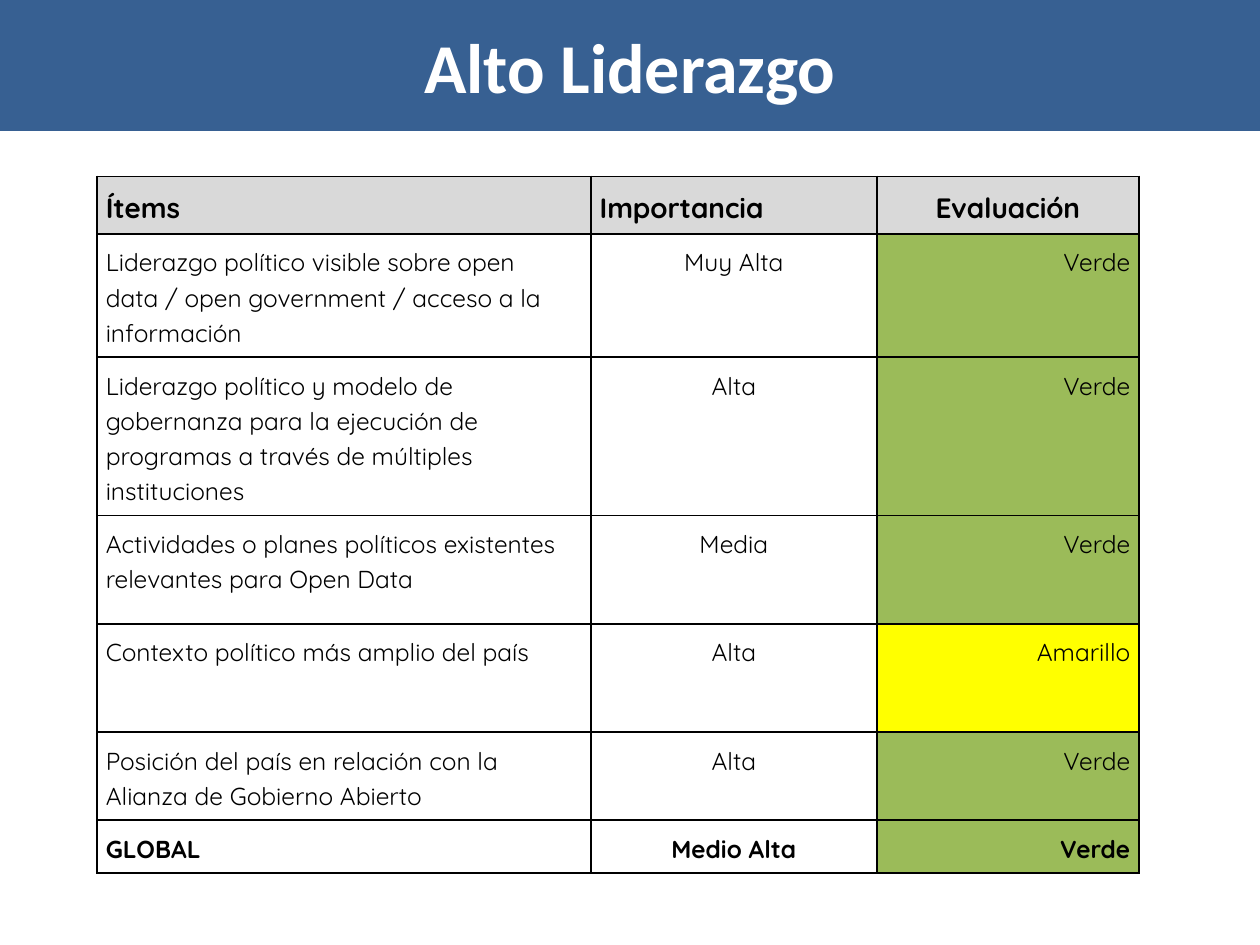
from lxml import etree
from pptx import Presentation
from pptx.dml.color import RGBColor
from pptx.enum import shapes, text
from pptx.oxml import ns
from pptx.util import Pt

LEFT, CENTER, RIGHT = text.PP_ALIGN.LEFT, text.PP_ALIGN.CENTER, text.PP_ALIGN.RIGHT
BLACK, WHITE, GREY, BLUE = "000000", "FFFFFF", "D9D9D9", "376092"
RATING_FILLS = {"Verde": "9BBB59", "Amarillo": "FFFF00"}
COL_WIDTHS = [282.24, 163.44, 149.76]
ROW_HEIGHTS = [30.24, 61.92, 74.88, 61.92, 61.92, 48.96, 30.24]
ROWS = [
    ("Ítems", "Importancia", "Evaluación"),
    ("Liderazgo político visible sobre open data / open government / acceso a la información",
     "Muy Alta", "Verde"),
    ("Liderazgo político y modelo de gobernanza para la ejecución de programas "
     "a través de múltiples instituciones", "Alta", "Verde"),
    ("Actividades o planes políticos existentes relevantes para Open Data", "Media", "Verde"),
    ("Contexto político más amplio del país", "Alta", "Amarillo"),
    ("Posición del país en relación con la Alianza de Gobierno Abierto", "Alta", "Verde"),
    ("GLOBAL", "Medio Alta", "Verde"),
]


def rgb(color):
    return RGBColor.from_string(color)


def format_text(p, font, size, color, bold, align):
    p.alignment = align
    for r in p.runs:
        r.font.name = font
        r.font.size = Pt(size)
        r.font.bold = bold
        r.font.color.rgb = rgb(color)


def set_fill(fill, color):
    if color:
        fill.solid()
        fill.fore_color.rgb = rgb(color)
    else:
        fill.background()


def set_borders(cell, color, width):
    tc_pr = cell._tc.get_or_add_tcPr()
    for side in ("lnL", "lnR", "lnT", "lnB"):
        ln = etree.SubElement(tc_pr, ns.qn(f"a:{side}"), w=str(Pt(width)))
        solid = etree.SubElement(ln, ns.qn("a:solidFill"))
        etree.SubElement(solid, ns.qn("a:srgbClr"), val=color)


def add_title(s, title, left, top, width, height):
    sp = s.shapes.add_shape(shapes.MSO_SHAPE.RECTANGLE,
                            Pt(left), Pt(top), Pt(width), Pt(height))
    sp.shadow.inherit = False
    set_fill(sp.fill, BLUE)
    sp.line.fill.background()
    tf = sp.text_frame
    tf.word_wrap = True
    tf.vertical_anchor = text.MSO_ANCHOR.MIDDLE
    tf.text = title
    format_text(tf.paragraphs[0], "Calibri", 40, WHITE, True, CENTER)


def format_cell(cell, value, size, bold, align, fill):
    cell.margin_left = cell.margin_right = Pt(5)
    cell.margin_top = cell.margin_bottom = Pt(5)
    set_borders(cell, BLACK, 1)
    set_fill(cell.fill, fill)
    cell.text_frame.text = value
    p = cell.text_frame.paragraphs[0]
    p.line_spacing = 1.15
    p.space_after = Pt(10)
    format_text(p, "Quicksand", size, BLACK, bold, align)


def add_ratings(s, left, top):
    table = s.shapes.add_table(len(ROWS), len(COL_WIDTHS), Pt(left), Pt(top),
                               Pt(sum(COL_WIDTHS)), Pt(sum(ROW_HEIGHTS))).table
    for col, width in zip(table.columns, COL_WIDTHS):
        col.width = Pt(width)
    for i, (row, height) in enumerate(zip(ROWS, ROW_HEIGHTS)):
        table.rows[i].height = Pt(height)
        header = i == 0
        bold = header or i == len(ROWS) - 1
        aligns = (LEFT, LEFT, CENTER) if header else (LEFT, CENTER, RIGHT)
        for j, (value, align) in enumerate(zip(row, aligns)):
            fill = GREY if header else RATING_FILLS.get(value)
            format_cell(table.cell(i, j), value, 16 if header else 14, bold, align, fill)


def main():
    prs = Presentation()
    prs.slide_width, prs.slide_height = Pt(720), Pt(540)
    s = prs.slides.add_slide(prs.slide_layouts[6])
    add_ratings(s, 55.44, 100.8)
    add_title(s, "Alto Liderazgo", 0, 0, 720, 74.88)
    prs.save("out.pptx")


if __name__ == "__main__":
    main()
